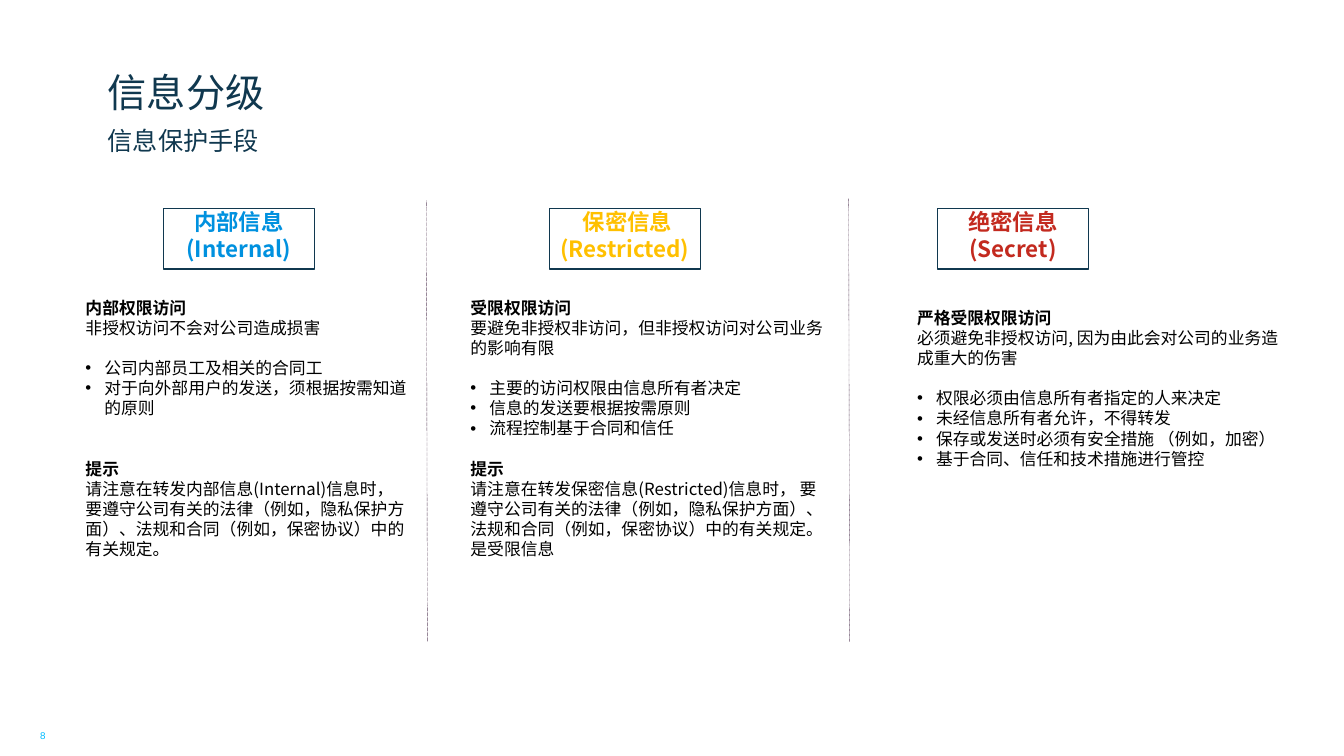
from lxml.etree import SubElement
from pptx import Presentation
from pptx.dml.color import RGBColor
from pptx.enum.dml import MSO_LINE
from pptx.enum.shapes import MSO_CONNECTOR, MSO_SHAPE
from pptx.enum.text import MSO_ANCHOR, PP_ALIGN
from pptx.oxml.ns import qn
from pptx.util import Pt

COLORS = {
    "navy": "10384F", "cyan": "00BCFF", "black": "000000", "divider": "624963",
    "internal": "0091DF", "restricted": "FFC000", "secret": "C32A1F",
}
BODY_FONT = "Noto Sans CJK SC"
BLANK_LINE = 14.4
BULLET_INDENT = 13.5


def prepare_frame(shape, margins=(0, 0, 0, 0), anchor=MSO_ANCHOR.TOP):
    frame = shape.text_frame
    sides = ("margin_left", "margin_top", "margin_right", "margin_bottom")
    settings = {"word_wrap": True, "vertical_anchor": anchor}
    settings.update({side: Pt(margin) for side, margin in zip(sides, margins)})
    for name, value in settings.items():
        setattr(frame, name, value)
    return frame


def write_paragraph(paragraph, text, color, **font_format):
    run = paragraph.add_run()
    run.text = text
    for name, value in font_format.items():
        setattr(run.font, name, value)
    run.font.color.rgb = RGBColor.from_string(COLORS[color])


presentation = Presentation()
presentation.slide_width, presentation.slide_height = Pt(960), Pt(540)
slide = presentation.slides.add_slide(presentation.slide_layouts[6])

# Title, subtitle and page number
labels = [
    ("信息分级", (77, 14.4, 850.3, 67.7), 28, "navy", MSO_ANCHOR.BOTTOM, PP_ALIGN.LEFT),
    ("信息保护手段", (77, 89.3, 850.3, 20.2), 18, "navy", MSO_ANCHOR.TOP, PP_ALIGN.LEFT),
    ("8", (15.1, 521.3, 31, 8.6), 7, "cyan", MSO_ANCHOR.TOP, PP_ALIGN.CENTER),
]
for text, place, size, color, anchor, alignment in labels:
    shape = slide.shapes.add_textbox(*map(Pt, place))
    paragraph = prepare_frame(shape, anchor=anchor).paragraphs[0]
    paragraph.alignment = alignment
    write_paragraph(paragraph, text, color, size=Pt(size), name="Arial")

# Columns: heading box and body; each body line is (kind, text, blank lines before)
columns = [
    {
        "heading": "内部信息(Internal)", "color": "internal", "heading_left": 116.6,
        "body": (54, 208.8, 247, 196.6),
        "lines": [
            ("bold", "内部权限访问", 0),
            ("plain", "非授权访问不会对公司造成损害", 0),
            ("bullet", "公司内部员工及相关的合同工", 1),
            ("bullet", "对于向外部用户的发送，须根据按需知道的原则", 0),
            ("bold", "提示", 2),
            ("plain", "请注意在转发内部信息(Internal)信息时， 要遵守公司有关的法律"
                      "（例如，隐私保护方面）、法规和合同（例如，保密协议）中的有关规定。", 0),
        ],
    },
    {
        "heading": " 保密信息(Restricted)", "color": "restricted", "heading_left": 392.4,
        "body": (329, 208.8, 269.3, 196.6),
        "lines": [
            ("bold", "受限权限访问", 0),
            ("plain", "要避免非授权非访问，但非授权访问对公司业务的影响有限", 0),
            ("bullet", "主要的访问权限由信息所有者决定", 1),
            ("bullet", "信息的发送要根据按需原则", 0),
            ("bullet", "流程控制基于合同和信任", 0),
            ("bold", "提示", 1),
            ("plain", "请注意在转发保密信息(Restricted)信息时， 要遵守公司有关的法律"
                      "（例如，隐私保护方面）、法规和合同（例如，保密协议）中的有关规定。", 0),
            ("plain", "是受限信息", 0),
        ],
    },
    {
        "heading": "绝密信息(Secret)", "color": "secret", "heading_left": 669.6,
        "body": (648, 216, 279.4, 152.6),
        "lines": [
            ("bold", "严格受限权限访问", 0),
            ("plain", "必须避免非授权访问, 因为由此会对公司的业务造成重大的伤害", 0),
            ("bullet", "权限必须由信息所有者指定的人来决定", 1),
            ("bullet", "未经信息所有者允许，不得转发", 0),
            ("bullet", "保存或发送时必须有安全措施 （例如，加密）", 0),
            ("bullet", "基于合同、信任和技术措施进行管控", 0),
        ],
    },
]
for column in columns:
    shape = slide.shapes.add_shape(
        MSO_SHAPE.RECTANGLE, Pt(column["heading_left"]), Pt(149), Pt(108), Pt(43.2))
    shape.shadow.inherit = False
    shape.fill.background()
    shape.line.color.rgb = RGBColor.from_string(COLORS["navy"])
    shape.line.width = Pt(0.75)
    paragraph = prepare_frame(shape).paragraphs[0]
    paragraph.alignment = PP_ALIGN.CENTER
    write_paragraph(paragraph, column["heading"], column["color"],
                    size=Pt(16), name=BODY_FONT, bold=True)

    body = slide.shapes.add_textbox(*map(Pt, column["body"]))
    frame = prepare_frame(body, margins=(7.2, 3.6, 7.2, 3.6))
    for index, (kind, text, blank_lines) in enumerate(column["lines"]):
        paragraph = frame.add_paragraph() if index else frame.paragraphs[0]
        if blank_lines:
            paragraph.space_before = Pt(blank_lines * BLANK_LINE)
        if kind == "bullet":
            properties = paragraph._p.get_or_add_pPr()
            properties.set("marL", str(Pt(BULLET_INDENT)))
            properties.set("indent", str(-Pt(BULLET_INDENT)))
            SubElement(properties, qn("a:buFont"), typeface="Arial")
            SubElement(properties, qn("a:buChar"), char="•")
        write_paragraph(paragraph, text, "black",
                        size=Pt(12), name=BODY_FONT, bold=kind == "bold")

# Dotted dividers between the columns
for left, top in [(304.6, 143.3), (606.2, 141.8)]:
    divider = slide.shapes.add_connector(
        MSO_CONNECTOR.STRAIGHT, Pt(left), Pt(top), Pt(left + 0.7), Pt(458.6))
    divider.line.color.rgb = RGBColor.from_string(COLORS["divider"])
    divider.line.width = Pt(0.25)
    divider.line.dash_style = MSO_LINE.ROUND_DOT
    SubElement(divider._element.spPr, qn("a:effectLst"))

presentation.save("out.pptx")
